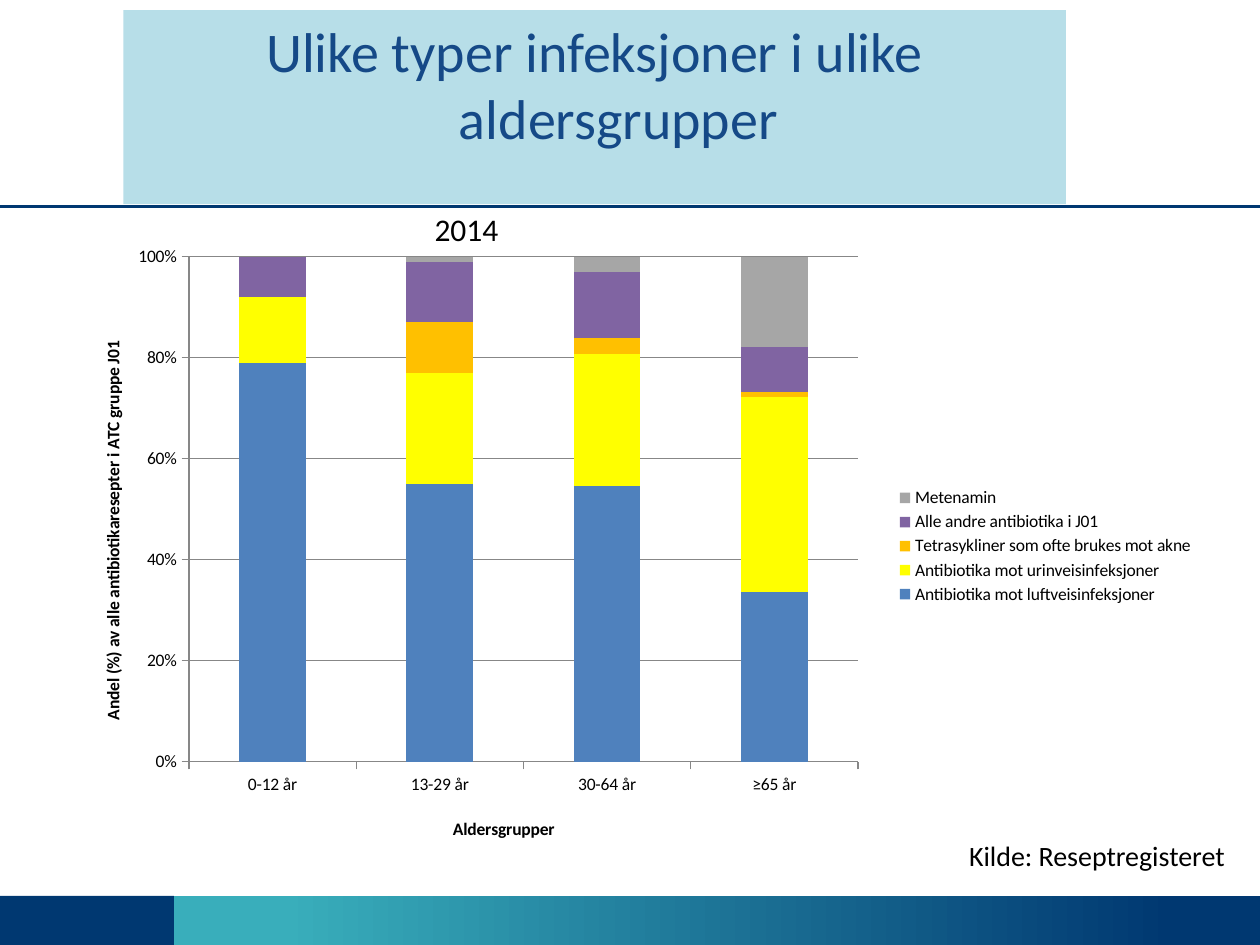
from dataclasses import dataclass

import pptx
import pptx.chart.data
import pptx.dml.color
import pptx.enum.chart
import pptx.enum.shapes
import pptx.enum.text
import pptx.oxml
import pptx.oxml.ns
import pptx.util
from pptx.util import Inches

COLORS = {
    "navy": "003871", "teal": "39AEBB", "title": "154987", "title_fill": "B7DEE8",
    "text": "000000", "grid": "878787", "airways": "4F81BD", "urinary": "FFFF00",
    "acne": "FFC000", "other": "8064A2", "methenamine": "A6A6A6",
}
FONT = "Calibri"
ALIGN = pptx.enum.text.PP_ALIGN


@dataclass
class Box:
    left: float
    top: float
    width: float
    height: float

    def lengths(self) -> tuple:
        return tuple(Inches(v) for v in (self.left, self.top, self.width, self.height))


@dataclass
class Label:
    text: str
    box: Box
    size: int
    align: ALIGN


@dataclass
class Series:
    name: str
    values: tuple
    color: str


LABELS = [
    Label("2014", Box(3.35, 1.62, 1.81, 0.4), 18, ALIGN.LEFT),
    Label("Kilde: Reseptregisteret", Box(6.51, 6.61, 3.31, 0.37), 16, ALIGN.RIGHT),
]
CATEGORIES = ("0-12 år", "13-29 år", "30-64 år", "≥65 år")
SERIES = [
    Series("Antibiotika mot luftveisinfeksjoner", (79, 55, 54, 34), "airways"),
    Series("Antibiotika mot urinveisinfeksjoner", (13, 22, 26, 39), "urinary"),
    Series("Tetrasykliner som ofte brukes mot akne", (0, 10, 3, 1), "acne"),
    Series("Alle andre antibiotika i J01", (8, 12, 13, 9), "other"),
    Series("Metenamin", (0, 1, 3, 18), "methenamine"),
]


def rgb(name: str):
    return pptx.dml.color.RGBColor.from_string(COLORS[name])


def set_values(target, values: dict) -> None:
    for name, value in values.items():
        setattr(target, name, value)


def format_font(font, size: int, color: str = "text", bold: bool = False) -> None:
    set_values(font, {"name": FONT, "size": pptx.util.Pt(size), "bold": bold})
    font.color.rgb = rgb(color)


def format_line(line, color: str, width: float) -> None:
    line.color.rgb = rgb(color)
    line.width = pptx.util.Pt(width)


def add_band(slide, box: Box):
    shape = slide.shapes.add_shape(pptx.enum.shapes.MSO_SHAPE.RECTANGLE, *box.lengths())
    shape.shadow.inherit = False
    shape.line.fill.background()
    return shape


def add_label(slide, label: Label) -> None:
    frame = slide.shapes.add_textbox(*label.box.lengths()).text_frame
    frame.word_wrap = True
    paragraph = frame.paragraphs[0]
    paragraph.alignment = label.align
    run = paragraph.add_run()
    run.text = label.text
    format_font(run.font, label.size)


def format_title(title) -> None:
    box = Box(0.98, 0.08, 7.48, 1.54).lengths()
    set_values(title, dict(zip(("left", "top", "width", "height"), box)))
    title.fill.solid()
    title.fill.fore_color.rgb = rgb("title_fill")
    frame = title.text_frame
    set_values(frame, {
        "text": "Ulike typer infeksjoner i ulike aldersgrupper",
        "word_wrap": True,
        "auto_size": pptx.enum.text.MSO_AUTO_SIZE.NONE,
        "vertical_anchor": pptx.enum.text.MSO_ANCHOR.TOP,
    })
    paragraph = frame.paragraphs[0]
    paragraph.alignment = ALIGN.CENTER
    # Hanging indent
    properties = paragraph._p.get_or_add_pPr()
    properties.set("marL", str(Inches(0.38)))
    properties.set("indent", str(Inches(-0.38)))
    format_font(paragraph.runs[0].font, 32, "title")


def place(element, after: tuple, inner: bool = False, **fractions: float) -> None:
    """Set a manual layout, in fractions of the chart, behind the named children."""
    qn = pptx.oxml.ns.qn
    for old in element.findall(qn("c:layout")):
        element.remove(old)
    parts = '<c:layoutTarget val="inner"/>' if inner else ""
    parts += "".join(f'<c:{key}Mode val="edge"/>' for key in ("x", "y"))
    parts += "".join(f'<c:{key} val="{value}"/>' for key, value in fractions.items())
    layout = pptx.oxml.parse_xml(
        f'<c:layout {pptx.oxml.ns.nsdecls("c")}><c:manualLayout>{parts}'
        "</c:manualLayout></c:layout>")
    tags = [qn(tag) for tag in after]
    element.insert(sum(child.tag in tags for child in element), layout)


def format_axis(axis, title: str, x: float, y: float) -> None:
    set_values(axis, {
        "major_tick_mark": pptx.enum.chart.XL_TICK_MARK.OUTSIDE,
        "minor_tick_mark": pptx.enum.chart.XL_TICK_MARK.NONE,
    })
    format_line(axis.format.line, "grid", 0.75)
    format_font(axis.tick_labels.font, 10)
    frame = axis.axis_title.text_frame
    frame.text = title
    format_font(frame.paragraphs[0].runs[0].font, 10, bold=True)
    place(axis.axis_title._element, ("c:tx",), x=x, y=y)


def add_age_chart(slide) -> None:
    data = pptx.chart.data.CategoryChartData()
    data.categories = CATEGORIES
    for series in SERIES:
        data.add_series(series.name, series.values)
    chart = slide.shapes.add_chart(
        pptx.enum.chart.XL_CHART_TYPE.COLUMN_STACKED_100,
        *Box(0.51, 1.86, 9, 4.95).lengths(), data).chart
    format_font(chart.font, 10)
    set_values(chart, {"has_title": False, "has_legend": True})
    set_values(chart.plots[0], {"gap_width": 150, "overlap": 100, "vary_by_categories": False})
    for drawn, series in zip(chart.plots[0].series, SERIES):
        drawn.format.fill.solid()
        drawn.format.fill.fore_color.rgb = rgb(series.color)

    # Axes
    format_axis(chart.category_axis, "Aldersgrupper", 0.34, 0.93)
    axis = chart.value_axis
    format_axis(axis, "Andel (%) av alle antibiotikaresepter i ATC gruppe J01 ", 0.03, 0.16)
    set_values(axis, {"minimum_scale": 0, "maximum_scale": 1, "major_unit": 0.2,
                      "has_major_gridlines": True})
    set_values(axis.tick_labels, {"number_format": "0%", "number_format_is_linked": False})
    format_line(axis.major_gridlines.format.line, "grid", 0.75)

    # Legend and plot area
    set_values(chart.legend, {"position": pptx.enum.chart.XL_LEGEND_POSITION.RIGHT,
                              "include_in_layout": False})
    format_font(chart.legend.font, 10)
    place(chart.legend._element, ("c:legendPos", "c:legendEntry"), x=0.73, y=0.4, w=0.27, h=0.2)
    place(chart._chartSpace.chart.plotArea, (), inner=True, x=0.11, y=0.036, w=0.59, h=0.81)


def main() -> None:
    presentation = pptx.Presentation()
    set_values(presentation, {"slide_width": Inches(10), "slide_height": Inches(7.5)})
    slide = presentation.slides.add_slide(presentation.slide_layouts[5])

    # Footer bands
    fade = add_band(slide, Box(1.38, 7.11, 8.62, 0.39)).fill
    fade.gradient()
    fade.gradient_angle = 0
    for stop, position, color in zip(fade.gradient_stops, (0.1, 0.92), ("teal", "navy")):
        stop.position = position
        stop.color.rgb = rgb(color)
    corner = add_band(slide, Box(0, 7.11, 1.38, 0.39)).fill
    corner.solid()
    corner.fore_color.rgb = rgb("navy")

    # Rule under the title
    rule = slide.shapes.add_connector(
        pptx.enum.shapes.MSO_CONNECTOR.STRAIGHT,
        Inches(0), Inches(1.64), Inches(10), Inches(1.64))
    format_line(rule.line, "navy", 2)
    rule._element.spPr.append(
        pptx.oxml.parse_xml(f'<a:effectLst {pptx.oxml.ns.nsdecls("a")}/>'))

    # Content
    add_age_chart(slide)
    format_title(slide.shapes.title)
    for label in LABELS:
        add_label(slide, label)
    presentation.save("out.pptx")


if __name__ == "__main__":
    main()
